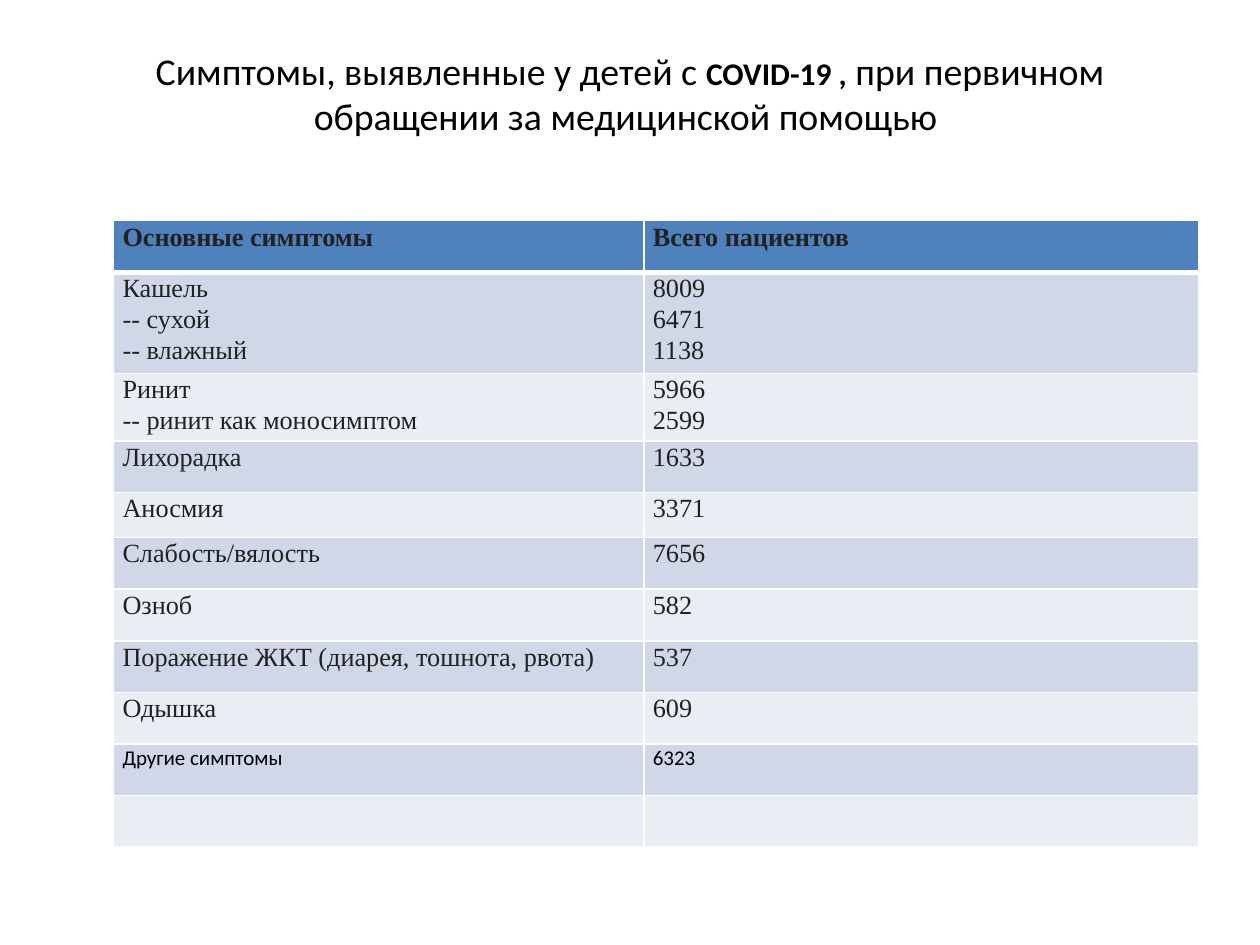
import pptx
import pptx.dml.color
import pptx.enum.text
import pptx.oxml
import pptx.oxml.ns
import pptx.util

Cm = pptx.util.Cm
Pt = pptx.util.Pt

HEAD, DARK, PALE = "4F81BD", "D0D8E8", "E9EDF4"
SERIF = ("Times New Roman", 15, "212121")
SANS = ("Calibri", 12, "000000")

# Each row: height in cm, symptom lines, count lines
ROWS = [
    (1.04, ["Основные симптомы"], ["Всего пациентов"]),
    (1.98, ["Кашель", "-- сухой", "-- влажный"], ["8009", "6471", "1138"]),
    (1.32, ["Ринит", "-- ринит как моносимптом"], ["5966", "2599"]),
    (1.04, ["Лихорадка"], ["1633"]),
    (0.91, ["Аносмия"], ["3371"]),
    (1.04, ["Слабость/вялость"], ["7656"]),
    (1.04, ["Озноб"], ["582"]),
    (1.04, ["Поражение ЖКТ (диарея, тошнота, рвота)"], ["537"]),
    (1.04, ["Одышка"], ["609"]),
    (1.04, ["Другие симптомы"], ["6323"]),
    (1.04, [], []),
]
OTHER = 9


def color(hex):
    return pptx.dml.color.RGBColor.from_string(hex)


def add_run(para, text, font, size, hex, bold=False):
    run = para.add_run()
    run.text = text
    run.font.name = font
    run.font.size = Pt(size)
    run.font.bold = bold
    run.font.color.rgb = color(hex)


def add_title(slide, left, top, width, height):
    box = slide.shapes.add_textbox(left, top, width, height)
    frame = box.text_frame
    frame.word_wrap = True
    frame.vertical_anchor = pptx.enum.text.MSO_ANCHOR.MIDDLE
    frame.margin_bottom = Cm(1.07)
    para = frame.paragraphs[0]
    para.alignment = pptx.enum.text.PP_ALIGN.CENTER
    for text, size, bold in [
        ("Симптомы, выявленные у детей с ", 21.6, False),
        ("COVID-19 ,", 18, True),
        (" при первичном обращении за медицинской помощью ", 21.6, False),
    ]:
        add_run(para, text, "Calibri", size, "000000", bold)


def set_edges(cell, top, base):
    """Draw white cell borders; top and base are line widths in points."""
    props = cell._tc.get_or_add_tcPr()
    space = pptx.oxml.ns.nsdecls("a")
    edges = [("L", 1), ("R", 1), ("T", top), ("B", base)]
    for place, (side, width) in enumerate(edges):
        line = pptx.oxml.parse_xml(
            f'<a:ln{side} {space} w="{Pt(width)}"><a:solidFill>'
            f'<a:srgbClr val="FFFFFF"/></a:solidFill></a:ln{side}>'
        )
        props.insert(place, line)


def fill_cell(cell, lines, hex, style, bold):
    cell.fill.solid()
    cell.fill.fore_color.rgb = color(hex)
    cell.margin_left = cell.margin_right = Cm(0.18)
    cell.margin_top = cell.margin_bottom = 0
    frame = cell.text_frame
    for index, text in enumerate(lines):
        para = frame.add_paragraph() if index else frame.paragraphs[0]
        para.line_spacing = 1.07
        add_run(para, text, *style, bold)


def add_table(slide, left, top, width, height):
    shape = slide.shapes.add_table(len(ROWS), 2, left, top, width, height)
    table = shape.table
    first = Cm(10.69)
    table.columns[0].width = first
    table.columns[1].width = width - first
    for index, (tall, *cells) in enumerate(ROWS):
        table.rows[index].height = Cm(tall)
        hex = HEAD if index == 0 else DARK if index % 2 else PALE
        style = SANS if index == OTHER else SERIF
        for col, lines in enumerate(cells):
            cell = table.cell(index, col)
            fill_cell(cell, lines, hex, style, index == 0)
            set_edges(cell, 3 if index == 1 else 1, 3 if index == 0 else 1)


def main():
    deck = pptx.Presentation()
    deck.slide_width = Cm(25.4)
    deck.slide_height = Cm(19.05)
    slide = deck.slides.add_slide(deck.slide_layouts[6])
    add_title(slide, Cm(1.27), Cm(0.76), Cm(22.86), Cm(3.18))
    tall = sum(row[0] for row in ROWS)
    add_table(slide, Cm(2.29), Cm(4.45), Cm(21.87), Cm(tall))
    deck.save("out.pptx")


if __name__ == "__main__":
    main()
